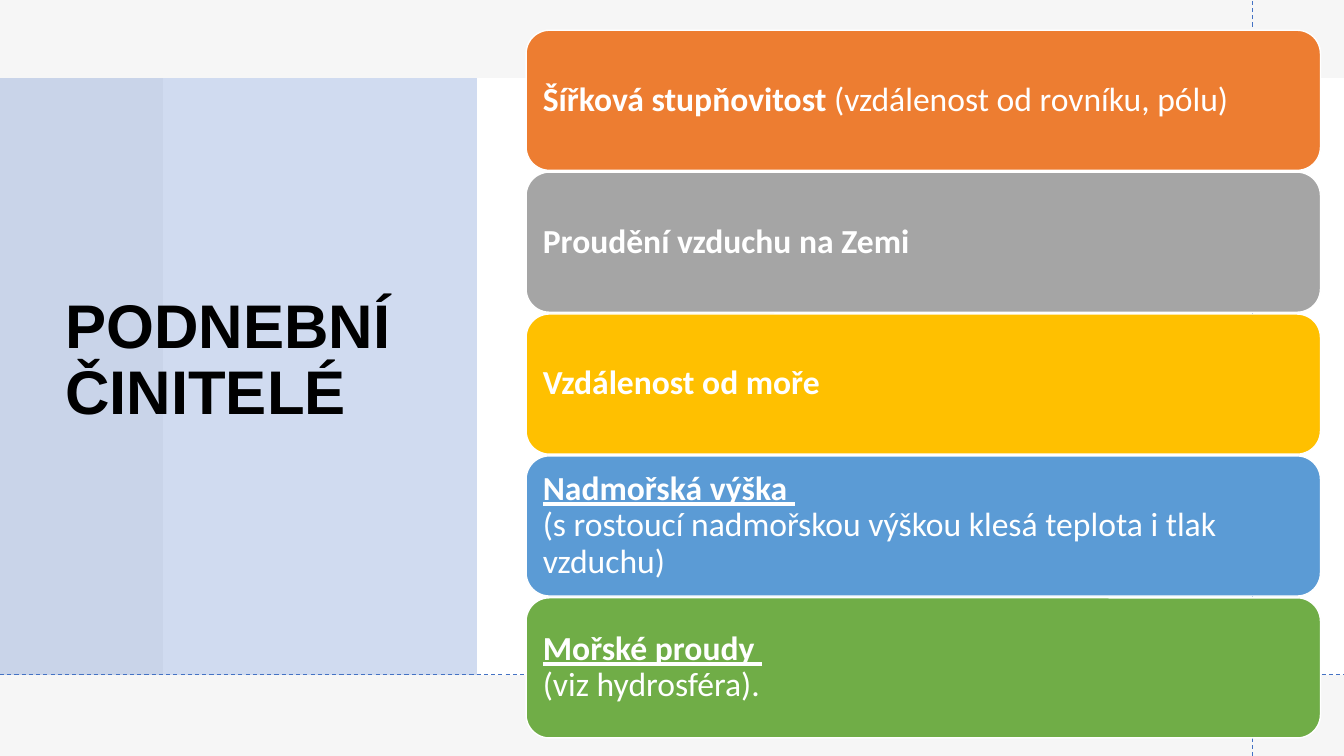
import lxml.etree
import pptx
import pptx.util
import pptx.dml.color
import pptx.enum.dml
import pptx.enum.shapes
import pptx.enum.text
import pptx.oxml.ns

Pt = pptx.util.Pt
SHAPES = pptx.enum.shapes.MSO_SHAPE
qn = pptx.oxml.ns.qn

# Content: fill, heading, heading underlined, break after heading, detail
TITLE = "PODNEBNÍ ČINITELÉ"
FACTORS = [
    ("ED7D31", "Šířková stupňovitost ", False, False, "(vzdálenost od rovníku, pólu)"),
    ("A5A5A5", "Proudění vzduchu na Zemi", False, False, ""),
    ("FFC000", "Vzdálenost od moře", False, False, ""),
    ("5B9BD5", "Nadmořská výška ", True, True,
     "(s rostoucí nadmořskou výškou klesá teplota i tlak vzduchu)"),
    ("70AD47", "Mořské proudy ", True, True, "(viz hydrosféra)."),
]

# Layout in points
WIDTH, HEIGHT = 960, 540
CARD_LEFT, CARD_TOP, CARD_WIDTH, CARD_HEIGHT = 375.8, 21.6, 567.4, 100.1
CARD_PITCH = 101.35
GUIDE_X, GUIDE_Y = 894.8, 481.7
BACKDROPS = [  # left, top, width, height, colour, opacity in percent
    (0, 0, WIDTH, HEIGHT, "FFFFFF", 100),
    (0, 0, WIDTH, HEIGHT, "E7E6E6", 35),
    (116.5, 55.8, WIDTH - 116.5, 426.2, "FFFFFF", 100),
    (0, 55.8, 340.7, 426.2, "4472C4", 25),
]


def color(hex_code):
    return pptx.dml.color.RGBColor.from_string(hex_code)


def add_block(kind, left, top, width, height, fill, opacity=100):
    block = slide.shapes.add_shape(kind, Pt(left), Pt(top), Pt(width), Pt(height))
    block.shadow.inherit = False
    block.fill.solid()
    block.fill.fore_color.rgb = color(fill)
    block.line.fill.background()
    if opacity < 100:
        tone = block._element.spPr.find(qn("a:solidFill")).find(qn("a:srgbClr"))
        lxml.etree.SubElement(tone, qn("a:alpha")).set("val", str(opacity * 1000))
    return block


def add_guide(x1, y1, x2, y2):
    guide = slide.shapes.add_connector(
        pptx.enum.shapes.MSO_CONNECTOR.STRAIGHT, Pt(x1), Pt(y1), Pt(x2), Pt(y2))
    guide.line.color.rgb = color("4472C4")
    guide.line.width = Pt(0.75)
    guide.line.dash_style = pptx.enum.dml.MSO_LINE.DASH
    lxml.etree.SubElement(guide._element.spPr, qn("a:effectLst"))


def prepare_text(frame, inset_y):
    frame.word_wrap = True
    frame.vertical_anchor = pptx.enum.text.MSO_ANCHOR.MIDDLE
    frame.margin_left = frame.margin_right = Pt(7.2)
    frame.margin_top = frame.margin_bottom = Pt(inset_y)
    paragraph = frame.paragraphs[0]
    paragraph.alignment = pptx.enum.text.PP_ALIGN.LEFT
    paragraph.line_spacing = 0.9
    return paragraph


def add_run(paragraph, wording, font, size, hex_code, bold, underline=False):
    run = paragraph.add_run()
    run.text = wording
    run.font.name = font
    run.font.size = Pt(size)
    run.font.color.rgb = color(hex_code)
    run.font.bold = bold
    run.font.underline = underline


presentation = pptx.Presentation()
presentation.slide_width = Pt(WIDTH)
presentation.slide_height = Pt(HEIGHT)
slide = presentation.slides.add_slide(presentation.slide_layouts[6])

# Backdrop panels
for left, top, width, height, fill, opacity in BACKDROPS:
    add_block(SHAPES.RECTANGLE, left, top, width, height, fill, opacity)

# Title
title = slide.shapes.add_textbox(Pt(39.6), Pt(53.3), Pt(284.4), Pt(409.7))
add_run(prepare_text(title.text_frame, 3.6), TITLE, "Arial", 44, "000000", True)

# Dashed guides
add_guide(GUIDE_X, HEIGHT, GUIDE_X, 0)
add_guide(0, GUIDE_Y, WIDTH, GUIDE_Y)

# Climate factor cards
for index, (fill, heading, underlined, breaks, detail) in enumerate(FACTORS):
    card = add_block(SHAPES.ROUNDED_RECTANGLE, CARD_LEFT, CARD_TOP + index * CARD_PITCH,
                     CARD_WIDTH, CARD_HEIGHT, fill)
    card.line.color.rgb = color("FFFFFF")
    card.line.width = Pt(1)
    factor = prepare_text(card.text_frame, 7.2)
    add_run(factor, heading, "Calibri", 24, "FFFFFF", True, underlined)
    if breaks:
        factor.add_line_break()
    if detail:
        add_run(factor, detail, "Calibri", 24, "FFFFFF", False)

presentation.save("out.pptx")
